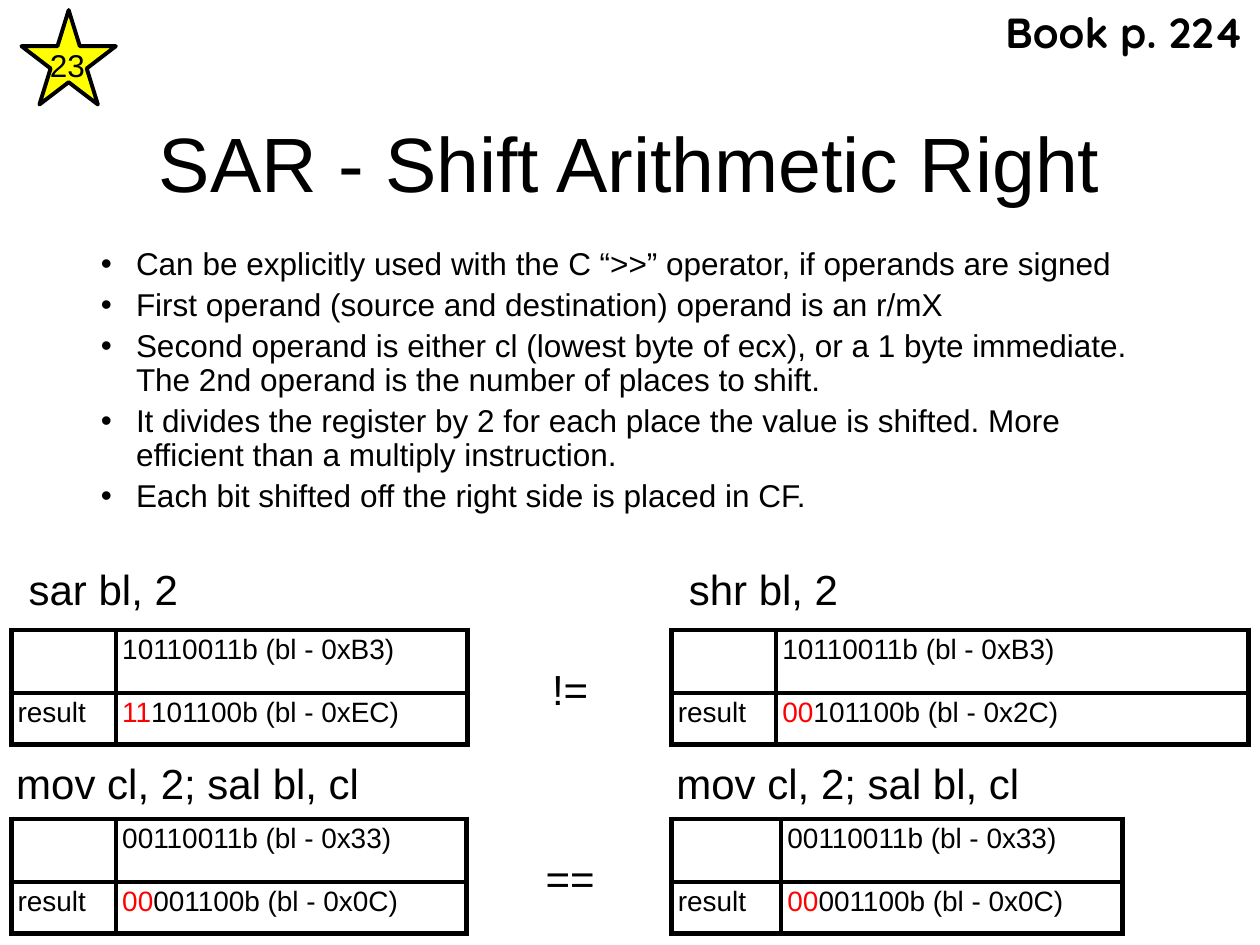
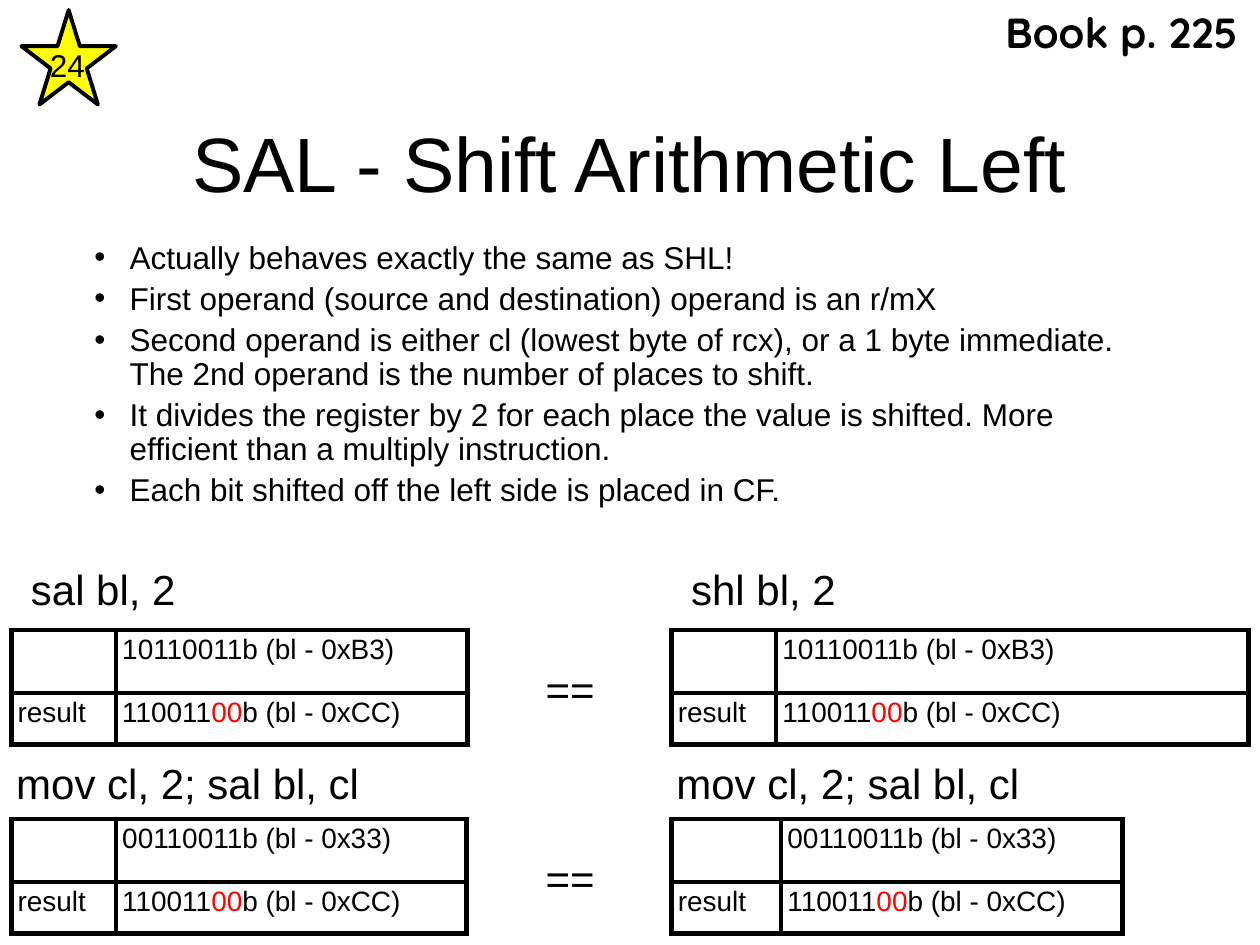
from lxml.etree import SubElement
from pptx import Presentation
from pptx.dml.color import RGBColor
from pptx.enum.shapes import MSO_SHAPE
from pptx.enum.text import MSO_ANCHOR, MSO_AUTO_SIZE, PP_ALIGN
from pptx.oxml import parse_xml
from pptx.oxml.ns import nsdecls, qn
from pptx.util import Inches, Pt

BLACK, RED, YELLOW = "000000", "FF0000", "FFFF00"
INSET = 0.05

# Bits between asterisks are shown in red.
SLIDES = [
    {
        "title": "SAR - Shift Arithmetic Right",
        "page": "Book p. 224",
        "number": "23",
        "bullet_inset": INSET,
        "bullets": [
            "Can be explicitly used with the C “>>” operator, if operands are signed",
            "First operand (source and destination) operand is an r/mX",
            "Second operand is either cl (lowest byte of ecx), or a 1 byte immediate. "
            "The 2nd operand is the number of places to shift.",
            "It divides the register by 2 for each place the value is shifted. "
            "More efficient than a multiply instruction.",
            "Each bit shifted off the right side is placed in CF.",
        ],
        "commands": [("sar bl, 2", "shr bl, 2"),
                     ("mov cl, 2; sal bl, cl", "mov cl, 2; sal bl, cl")],
        "comparisons": ["!=", "=="],
        "results": [("*11*101100b (bl - 0xEC)", "*00*101100b (bl - 0x2C)"),
                    ("*00*001100b (bl - 0x0C)", "*00*001100b (bl - 0x0C)")],
    },
    {
        "title": "SAL - Shift Arithmetic Left",
        "page": "Book p. 225",
        "number": "24",
        "bullet_inset": 0,
        "bullets": [
            "Actually behaves exactly the same as SHL!",
            "First operand (source and destination) operand is an r/mX",
            "Second operand is either cl (lowest byte of rcx), or a 1 byte immediate. "
            "The 2nd operand is the number of places to shift.",
            "It divides the register by 2 for each place the value is shifted. "
            "More efficient than a multiply instruction.",
            "Each bit shifted off the left side is placed in CF.",
        ],
        "commands": [("sal bl, 2", "shl bl, 2"),
                     ("mov cl, 2; sal bl, cl", "mov cl, 2; sal bl, cl")],
        "comparisons": ["==", "=="],
        "results": [("110011*00*b (bl - 0xCC)", "110011*00*b (bl - 0xCC)"),
                    ("110011*00*b (bl - 0xCC)", "110011*00*b (bl - 0xCC)")],
    },
]
START_VALUES = ["10110011b (bl - 0xB3)", "00110011b (bl - 0x33)"]

# Two rows of examples, each with a left and a right table
TABLE_LEFTS = (0.09, 5.33)
TABLE_TOPS = (5.0, 6.5)
COL_WIDTHS = [[(0.83, 2.79), (0.83, 3.75)],
              [(0.83, 2.78), (0.87, 2.71)]]
ROW_HEIGHTS = (0.5, 0.41)
LABEL_OFFSETS = (0.08, -0.02)
LABEL_TOPS = (4.43, 5.97)
LABEL_WIDTHS = (1.3, 2.84)


def rgb(value):
    return RGBColor.from_string(value)


def write(tf, paragraphs, size=24, font="Arial", bold=False, align=PP_ALIGN.LEFT,
          anchor=MSO_ANCHOR.TOP, inset=INSET, wrap=False, line_spacing=None, before=None):
    """Fill a text frame; text between asterisks turns red."""
    tf.word_wrap = wrap
    tf.vertical_anchor = anchor
    tf.margin_left = tf.margin_right = tf.margin_top = tf.margin_bottom = Inches(inset)
    for i, text in enumerate(paragraphs):
        p = tf.add_paragraph() if i else tf.paragraphs[0]
        p.alignment = align
        if line_spacing:
            p.line_spacing = line_spacing
        if before:
            p.space_before = Pt(before)
        for j, part in enumerate(text.split("*")):
            if part:
                r = p.add_run()
                r.text = part
                r.font.size, r.font.name, r.font.bold = Pt(size), font, bold
                r.font.color.rgb = rgb(RED if j % 2 else BLACK)


def add_text(shapes, box, *paragraphs, **fmt):
    sp = shapes.add_textbox(*map(Inches, box))
    write(sp.text_frame, paragraphs, **fmt)
    sp.text_frame.auto_size = MSO_AUTO_SIZE.SHAPE_TO_FIT_TEXT
    return sp


def add_title(slide, text):
    sp = slide.shapes.title
    sp.left, sp.top, sp.width, sp.height = map(Inches, (0.75, 0.9, 8.5, 0.77))
    write(sp.text_frame, [text], size=44, align=PP_ALIGN.CENTER,
          anchor=MSO_ANCHOR.MIDDLE, inset=0, wrap=True)
    sp.text_frame.auto_size = MSO_AUTO_SIZE.NONE


def add_bullets(slide, items, inset):
    sp = add_text(slide.shapes, (0.75, 1.92, 8.5, 2.19), *items, size=18,
                  inset=inset, wrap=True, line_spacing=0.9, before=4)
    for p in sp.text_frame.paragraphs:
        pPr = p._p.get_or_add_pPr()
        pPr.set("marL", str(Inches(0.28)))
        pPr.set("indent", str(-Inches(0.28)))
        SubElement(pPr, qn("a:buFont"), typeface="Arial")
        SubElement(pPr, qn("a:buChar"), char="•")


def add_numbered_star(slide, number):
    group = slide.shapes.add_group_shape()
    sp = group.shapes.add_shape(MSO_SHAPE.STAR_5_POINT,
                                *map(Inches, (0.17, 0.08, 0.75, 0.75)))
    sp.shadow.inherit = False
    sp.fill.solid()
    sp.fill.fore_color.rgb = rgb(YELLOW)
    sp.line.color.rgb = rgb(BLACK)
    sp.line.width = Pt(2.25)
    add_text(group.shapes, (0.34, 0.32, 0.39, 0.39), number, size=18,
             align=PP_ALIGN.CENTER, anchor=MSO_ANCHOR.MIDDLE)


def set_borders(cell):
    tcPr = cell._tc.get_or_add_tcPr()
    for i, side in enumerate("LRTB"):
        tcPr.insert(i, parse_xml(
            f'<a:ln{side} {nsdecls("a")} w="{Pt(3)}"><a:solidFill>'
            f'<a:srgbClr val="{BLACK}"/></a:solidFill></a:ln{side}>'))


def add_bit_table(slide, left, top, widths, start, result):
    frame = slide.shapes.add_table(2, 2, Inches(left), Inches(top),
                                   Inches(sum(widths)), Inches(sum(ROW_HEIGHTS)))
    table = frame.table
    table.first_row = table.horz_banding = False
    for column, width in zip(table.columns, widths):
        column.width = Inches(width)
    for row, height, texts in zip(table.rows, ROW_HEIGHTS,
                                  [("", start), ("result", result)]):
        row.height = Inches(height)
        for cell, text in zip(row.cells, texts):
            cell.fill.background()
            set_borders(cell)
            cell.margin_left = cell.margin_right = Inches(INSET)
            cell.margin_top = cell.margin_bottom = Inches(INSET)
            if text:
                write(cell.text_frame, [text], size=16, wrap=True,
                      line_spacing=0.93, before=4)


def add_examples(slide, content):
    for row, top in enumerate(TABLE_TOPS):
        for side, left in enumerate(TABLE_LEFTS):
            add_bit_table(slide, left, top, COL_WIDTHS[row][side],
                          START_VALUES[row], content["results"][row][side])
            add_text(slide.shapes,
                     (left + LABEL_OFFSETS[row], LABEL_TOPS[row], LABEL_WIDTHS[row], 0.48),
                     content["commands"][row][side],
                     align=PP_ALIGN.CENTER, anchor=MSO_ANCHOR.MIDDLE)
        add_text(slide.shapes, (4.27, top + 0.22, 0.51, 0.48),
                 content["comparisons"][row], align=PP_ALIGN.CENTER)


def main():
    prs = Presentation()
    prs.slide_width, prs.slide_height = Inches(10), Inches(7.5)
    for content in SLIDES:
        slide = prs.slides.add_slide(prs.slide_layouts[5])
        add_title(slide, content["title"])
        add_bullets(slide, content["bullets"], content["bullet_inset"])
        add_examples(slide, content)
        add_text(slide.shapes, (7.93, 0, 1.99, 0.51), content["page"],
                 font="Quicksand", bold=True)
        add_numbered_star(slide, content["number"])
    prs.save("out.pptx")


if __name__ == "__main__":
    main()
